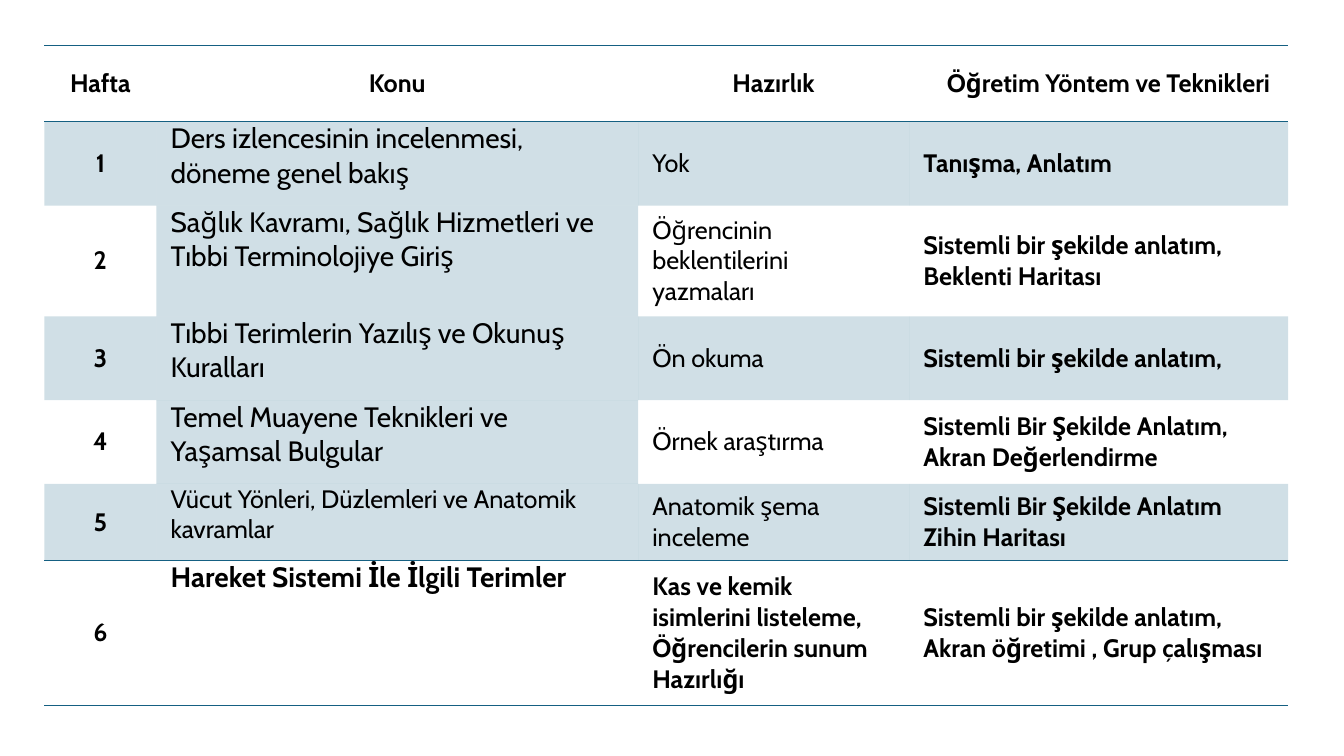
from lxml.etree import SubElement as Sub
from pptx import Presentation
from pptx.dml.color import RGBColor as RGB
from pptx.enum.text import MSO_ANCHOR as Anchor, PP_ALIGN as Align
from pptx.oxml.ns import qn
from pptx.util import Cm, Pt

FONT = "Cabin"
INK = "000000"
BLUE = "156082"
PLAIN = "{2D5ABB26-0587-4C30-8999-92F81FD0307C}"

WIDTHS = [2.82, 12.14, 6.83, 9.55]
HEIGHTS = [1.93, 2.11, 2.79, 2.11, 2.11, 1.93, 3.66]
HEADS = ["Hafta", "Konu", "Hazırlık", "Öğretim Yöntem ve Teknikleri"]
WEEKS = [
    ("Ders izlencesinin incelenmesi, döneme genel bakış",
     "Yok", "Tanışma, Anlatım"),
    ("Sağlık Kavramı, Sağlık Hizmetleri ve Tıbbi Terminolojiye Giriş",
     "Öğrencinin beklentilerini yazmaları",
     "Sistemli bir şekilde anlatım, Beklenti Haritası"),
    ("Tıbbi Terimlerin Yazılış ve Okunuş Kuralları",
     "Ön okuma", "Sistemli bir şekilde anlatım,"),
    ("Temel Muayene Teknikleri ve Yaşamsal Bulgular",
     "Örnek araştırma",
     "Sistemli Bir Şekilde Anlatım, Akran Değerlendirme"),
    ("Vücut Yönleri, Düzlemleri ve Anatomik kavramlar",
     "Anatomik şema inceleme",
     "Sistemli Bir Şekilde Anlatım Zihin Haritası"),
    ("Hareket Sistemi İle İlgili Terimler",
     "Kas ve kemik isimlerini listeleme, Öğrencilerin sunum Hazırlığı",
     "Sistemli bir şekilde anlatım, Akran öğretimi , Grup çalışması"),
]


def color(text):
    return RGB.from_string(text)


class Deck:
    def __init__(self, wide, high):
        self.prs = Presentation()
        self.prs.slide_width, self.prs.slide_height = Cm(wide), Cm(high)
        self.slide = self.prs.slides.add_slide(self.prs.slide_layouts[6])

    def table(self, left, top, widths, heights):
        frame = self.slide.shapes.add_table(
            len(heights), len(widths), Cm(left), Cm(top),
            Cm(sum(widths)), Cm(sum(heights)))
        grid = frame.table
        grid.first_row = grid.horz_banding = False
        grid._tbl.tblPr.find(qn("a:tableStyleId")).text = PLAIN
        for col, wide in zip(grid.columns, widths):
            col.width = Cm(wide)
        for row, high in zip(grid.rows, heights):
            row.height = Cm(high)
        return grid

    def rule(self, cell):
        props = cell._tc.get_or_add_tcPr()
        for side in ("a:lnT", "a:lnB"):
            line = Sub(props, qn(side), w=str(Pt(1)))
            fill = Sub(line, qn("a:solidFill"))
            Sub(fill, qn("a:srgbClr"), val=BLUE)

    def tint(self, cell, shade):
        if not shade:
            cell.fill.background()
            return
        cell.fill.solid()
        cell.fill.fore_color.rgb = color(BLUE)
        tone = cell._tc.tcPr.find(".//" + qn("a:srgbClr"))
        Sub(tone, qn("a:alpha"), val="20000")

    def text(self, cell, words, size, bold, align, anchor):
        cell.margin_left = cell.margin_right = Cm(0.36)
        cell.margin_top = cell.margin_bottom = 0
        cell.vertical_anchor = anchor
        para = cell.text_frame.paragraphs[0]
        para.alignment = align
        run = para.add_run()
        run.text = words
        font = run.font
        font.name, font.size, font.bold = FONT, Pt(size), bold
        font.color.rgb = color(INK)
        return para


def main():
    deck = Deck(33.87, 19.05)
    grid = deck.table(1.12, 1.14, WIDTHS, HEIGHTS)
    rows = [HEADS] + [(str(n), *week) for n, week in enumerate(WEEKS, 1)]
    last = len(WEEKS)
    for r, row in enumerate(rows):
        for c, words in enumerate(row):
            cell = grid.cell(r, c)
            edge = r in (0, last)
            topic = c == 1 and r > 0
            size = 20 if topic and r != 5 else 18
            bold = edge or c in (0, 3)
            align = Align.CENTER if r == 0 or c == 0 else Align.LEFT
            anchor = Anchor.TOP if topic else Anchor.MIDDLE
            para = deck.text(cell, words, size, bold, align, anchor)
            if r == 0 and c == 3:
                para._p.get_or_add_pPr().set("indent", str(Cm(0.5)))
            if edge:
                deck.rule(cell)
            deck.tint(cell, not edge and (r % 2 == 1 or topic))
    deck.prs.save("out.pptx")


if __name__ == "__main__":
    main()
